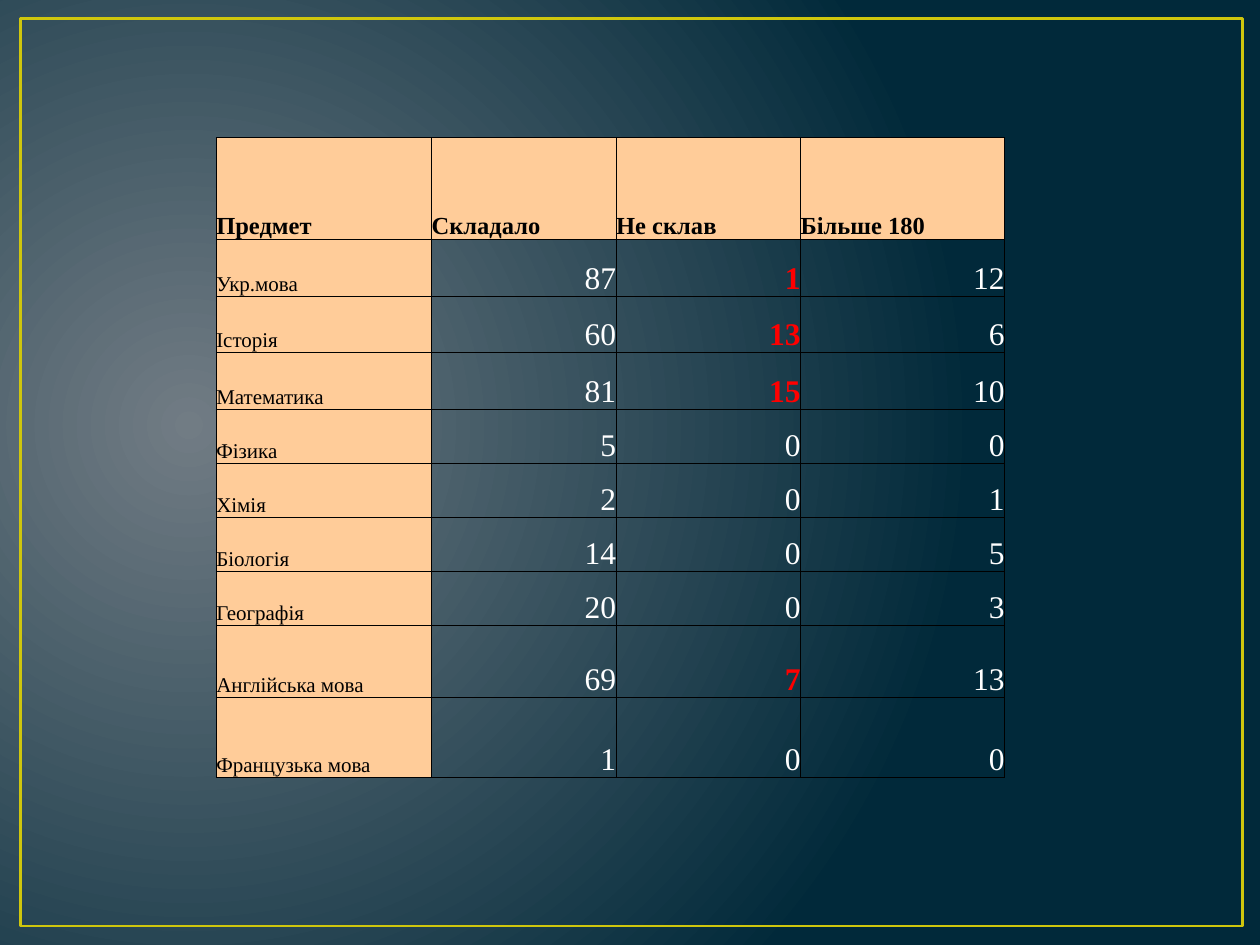
from lxml.etree import SubElement
from pptx import Presentation
from pptx.dml.color import RGBColor
from pptx.enum.shapes import MSO_SHAPE
from pptx.enum.text import MSO_ANCHOR, PP_ALIGN
from pptx.oxml.ns import qn
from pptx.util import Cm, Pt

GLOW = RGBColor(0x71, 0x7C, 0x84)
NIGHT = RGBColor(0x01, 0x29, 0x3A)
GOLD = RGBColor(0xCF, 0xC6, 0x0D)
PEACH = RGBColor(0xFF, 0xCC, 0x99)
BLACK = RGBColor(0, 0, 0)
WHITE = RGBColor(0xFF, 0xFF, 0xFF)
RED = RGBColor(0xFF, 0, 0)

HEADINGS = ["Предмет", "Складало", "Не склав", "Більше 180"]
RESULTS = [
    ("Укр.мова", 87, 1, 12),
    ("Історія", 60, 13, 6),
    ("Математика", 81, 15, 10),
    ("Фізика", 5, 0, 0),
    ("Хімія", 2, 0, 1),
    ("Біологія", 14, 0, 5),
    ("Географія", 20, 0, 3),
    ("Англійська мова", 69, 7, 13),
    ("Французька мова", 1, 0, 0),
]
FAILED = 2  # column of failed exams
COLUMN_WIDTHS = [4.34, 3.72, 3.72, 4.11]
ROW_HEIGHTS = [2.06] + [1.14] * 3 + [1.09] * 4 + [1.45, 1.61]

HEADING = {"size": Pt(14), "bold": True, "color": BLACK}
SUBJECT = {"size": Pt(12), "bold": False, "color": BLACK}
COUNT = {"size": Pt(18), "bold": False, "color": WHITE}
FAILURE = {"size": Pt(18), "bold": True, "color": RED}
CELL = {"margin_left": 0, "margin_right": 0, "margin_top": 0, "margin_bottom": 0,
        "vertical_anchor": MSO_ANCHOR.BOTTOM}


class SlideBuilder:
    font_name = "Times New Roman"
    border_width = Pt(0.5)

    def __init__(self, slide):
        self.slide = slide

    def background(self, inner, outer):
        fill = self.slide.background.fill
        fill.gradient()
        for stop, color, position in zip(fill.gradient_stops, (inner, outer), (0, 1)):
            stop.color.rgb = color
            stop.position = position
        # Turn the linear gradient into a circular one
        linear = next(self.slide.element.iter(qn("a:lin")))
        circle = linear.makeelement(qn("a:path"), {"path": "circle"})
        SubElement(circle, qn("a:fillToRect"), l="15000", t="50000", r="85000", b="60000")
        linear.getparent().replace(linear, circle)

    def frame(self, left, top, width, height, color):
        frame = self.slide.shapes.add_shape(
            MSO_SHAPE.RECTANGLE, Cm(left), Cm(top), Cm(width), Cm(height))
        frame.shadow.inherit = False
        frame.fill.background()
        frame.line.color.rgb = color
        frame.line.width = Pt(1.5)

    def table(self, left, top, widths, heights):
        table = self.slide.shapes.add_table(
            len(heights), len(widths), Cm(left), Cm(top),
            Cm(sum(widths)), Cm(sum(heights))).table
        for column, width in zip(table.columns, widths):
            column.width = Cm(width)
        for row, height in zip(table.rows, heights):
            row.height = Cm(height)
        return table

    def cell(self, cell, text, style, fill=None, align=PP_ALIGN.LEFT):
        for name, value in CELL.items():
            setattr(cell, name, value)
        self.borders(cell)
        if fill is None:
            cell.fill.background()
        else:
            cell.fill.solid()
            cell.fill.fore_color.rgb = fill
        paragraph = cell.text_frame.paragraphs[0]
        paragraph.alignment = align
        run = paragraph.add_run()
        run.text = str(text)
        run.font.name = self.font_name
        for name, value in style.items():
            if name == "color":
                run.font.color.rgb = value
            else:
                setattr(run.font, name, value)

    def borders(self, cell):
        properties = cell._tc.get_or_add_tcPr()
        for side in ("a:lnL", "a:lnR", "a:lnT", "a:lnB"):
            line = SubElement(properties, qn(side), w=str(self.border_width))
            solid = SubElement(line, qn("a:solidFill"))
            SubElement(solid, qn("a:srgbClr"), val=str(BLACK))


def main():
    presentation = Presentation()
    presentation.slide_width, presentation.slide_height = Cm(25.4), Cm(19.05)
    builder = SlideBuilder(presentation.slides.add_slide(presentation.slide_layouts[6]))

    # Backdrop
    builder.background(GLOW, NIGHT)
    builder.frame(0.41, 0.38, 24.64, 18.29, GOLD)

    # Exam results
    results = builder.table(4.36, 2.77, COLUMN_WIDTHS, ROW_HEIGHTS)
    for column, heading in enumerate(HEADINGS):
        builder.cell(results.cell(0, column), heading, HEADING, PEACH)
    for row, (subject, *counts) in enumerate(RESULTS, start=1):
        builder.cell(results.cell(row, 0), subject, SUBJECT, PEACH)
        for column, count in enumerate(counts, start=1):
            style = FAILURE if column == FAILED and count else COUNT
            builder.cell(results.cell(row, column), count, style, align=PP_ALIGN.RIGHT)

    presentation.save("out.pptx")


if __name__ == "__main__":
    main()
